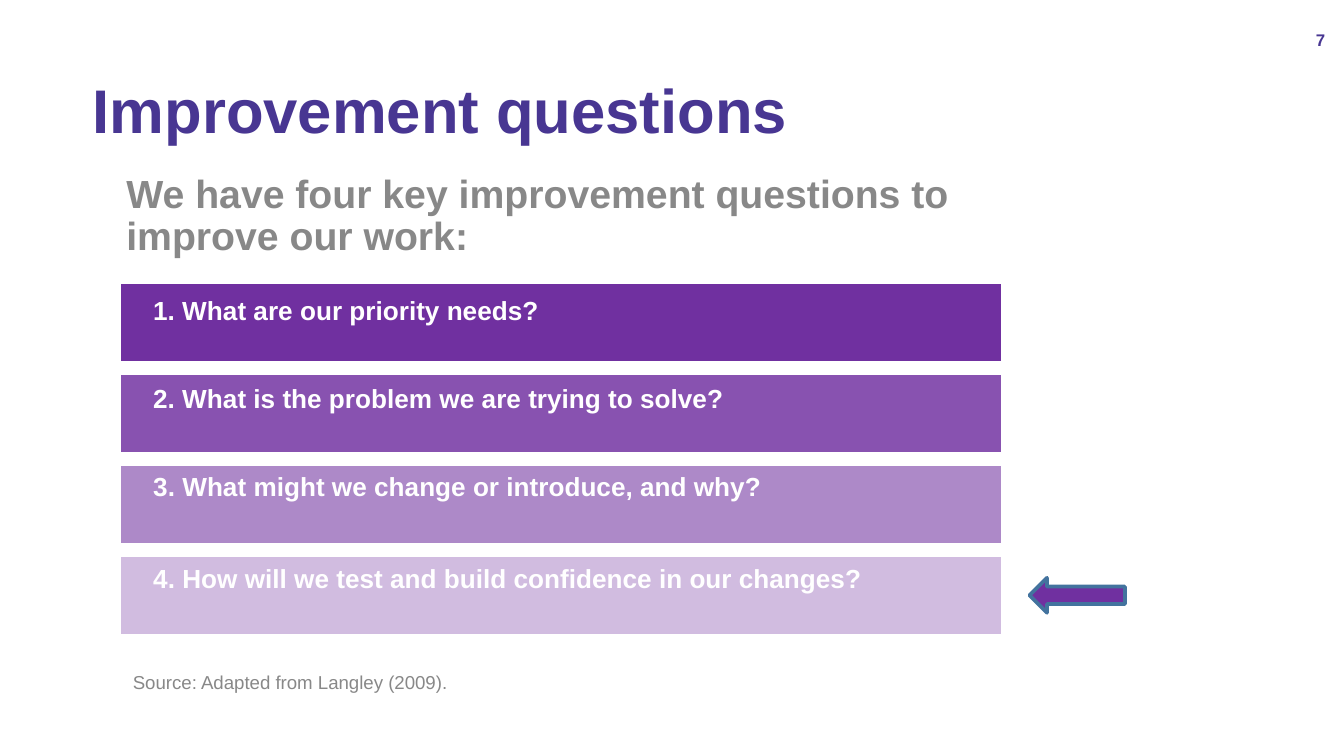
from lxml.etree import SubElement
from pptx import Presentation
from pptx.dml.color import RGBColor
from pptx.enum.shapes import MSO_SHAPE
from pptx.enum.text import MSO_ANCHOR, PP_ALIGN
from pptx.oxml.ns import qn
from pptx.util import Inches, Pt

COLORS = {
    "heading": "483692",
    "gray": "888888",
    "purple": "7030A0",
    "white": "FFFFFF",
    "arrow_line": "43739E",
}
PLACEHOLDER_INSETS = (0, 0.04, 0.07, 0.04)
QUESTIONS = [
    ("1. What are our priority needs?", 2.18, 5.14, 100),
    ("2. What is the problem we are trying to solve?", 2.83, 5.14, 83),
    ("3. What might we change or introduce, and why?", 3.49, 6.29, 57),
    ("4. How will we test and build confidence in our changes?", 4.17, 6.19, 32),
]
FIRST_BAR_TOP = 2.1
LAST_BAR_TOP = 4.13


def rgb(name):
    """Return the named colour."""
    return RGBColor.from_string(COLORS[name])


def add_text(page, area, text, size, color, bold=True, insets=PLACEHOLDER_INSETS,
             indent=0, spacing=0.9, anchor=MSO_ANCHOR.TOP, align=PP_ALIGN.LEFT):
    """Add a wrapped text box with one formatted paragraph."""
    box = page.shapes.add_textbox(*map(Inches, area))
    frame = box.text_frame
    left, top, right, bottom = map(Inches, insets)
    frame_format = {
        "word_wrap": True, "vertical_anchor": anchor,
        "margin_left": left, "margin_top": top,
        "margin_right": right, "margin_bottom": bottom,
    }
    for name, value in frame_format.items():
        setattr(frame, name, value)
    para = frame.paragraphs[0]
    para.text = text
    para.alignment = align
    para.line_spacing = spacing
    para._p.get_or_add_pPr().set("marL", str(Inches(indent)))
    for line_break in para._p.findall(qn("a:br")):
        SubElement(line_break, qn("a:rPr")).set("sz", str(size * 100))
    for span in para.runs:
        for name, value in {"name": "Arial", "size": Pt(size), "bold": bold}.items():
            setattr(span.font, name, value)
        span.font.color.rgb = rgb(color)


def add_figure(page, kind, area, line, opacity=100):
    """Add an outlined purple shape with the given opacity in percent."""
    shape = page.shapes.add_shape(kind, *map(Inches, area))
    shape.shadow.inherit = False
    shape.fill.solid()
    shape.fill.fore_color.rgb = rgb("purple")
    if opacity < 100:
        color = shape.fill._xPr.find(qn("a:solidFill"))[0]
        SubElement(color, qn("a:alpha")).set("val", str(opacity * 1000))
    shape.line.color.rgb = rgb(line)
    shape.line.width = Pt(2)


def add_question(page, index, text, text_top, text_width, opacity):
    """Add a question on its bar."""
    step = (LAST_BAR_TOP - FIRST_BAR_TOP) / (len(QUESTIONS) - 1)
    bar_top = FIRST_BAR_TOP + index * step
    add_figure(page, MSO_SHAPE.RECTANGLE, (0.89, bar_top, 6.57, 0.6), "white", opacity)
    add_text(page, (0.89, text_top, text_width, 0.43), text, 14, "white", indent=0.25)


def main():
    """Build and save the slide."""
    deck = Presentation()
    deck.slide_width = Inches(10)
    deck.slide_height = Inches(10) * 9 // 16
    page = deck.slides.add_slide(deck.slide_layouts[6])
    add_text(page, (0.69, 0.3, 8.62, 1.09), "Improvement questions", 33, "heading",
             anchor=MSO_ANCHOR.MIDDLE)
    add_text(page, (0.69, 1.26, 8.62, 3.57),
             "We have four key improvement questions to \vimprove our work:",
             21, "gray", indent=0.25)
    add_text(page, (0.89, 4.91, 5.83, 0.63), "Source: Adapted from Langley (2009).",
             10, "gray", bold=False, insets=(0.1,) * 4, spacing=1.0)
    for index, question in enumerate(QUESTIONS):
        add_question(page, index, *question)
    add_text(page, (9.51, 0.15, 0.42, 0.3), "7", 9, "heading",
             insets=(0.07, 0.04, 0.07, 0.04), spacing=1.0,
             anchor=MSO_ANCHOR.MIDDLE, align=PP_ALIGN.RIGHT)
    add_figure(page, MSO_SHAPE.LEFT_ARROW, (7.66, 4.3, 0.71, 0.26), "arrow_line")
    deck.save("out.pptx")


if __name__ == "__main__":
    main()
